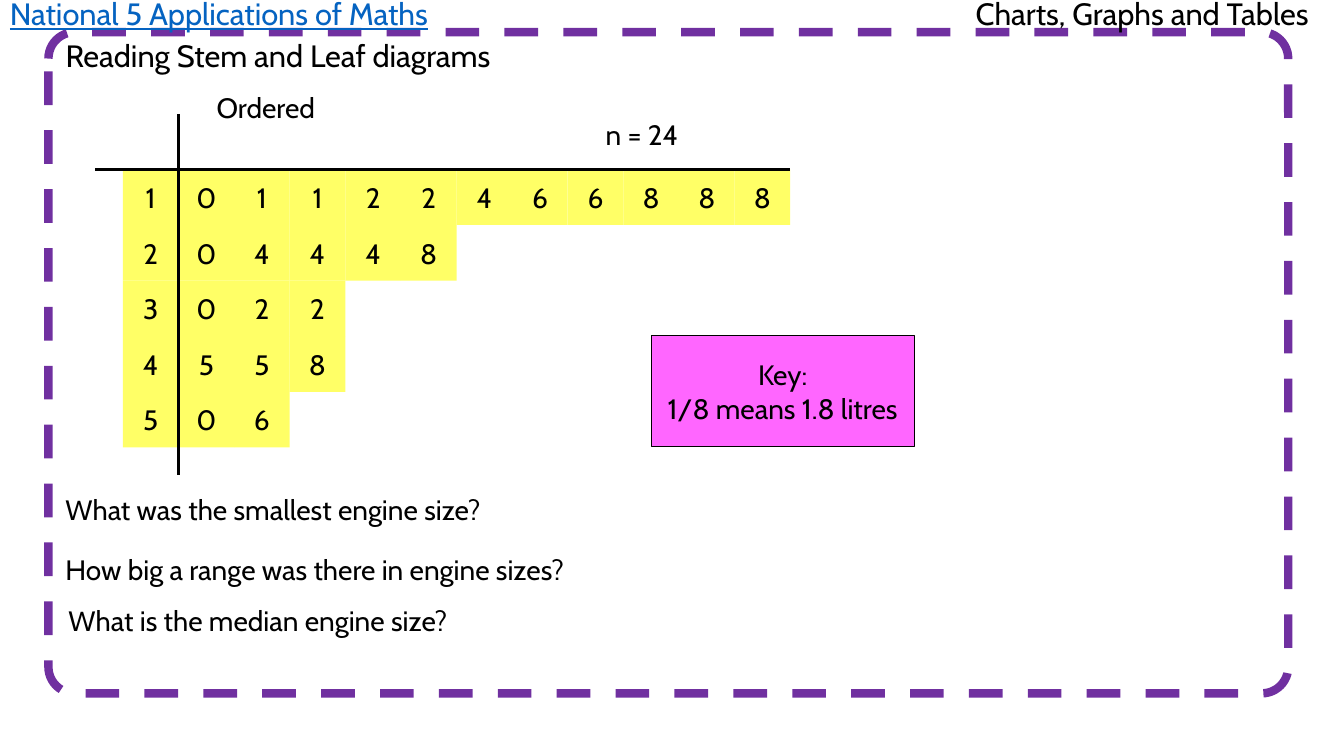
"""Build a slide on reading an ordered stem and leaf diagram."""
from dataclasses import dataclass

from lxml import etree
from pptx import Presentation
from pptx.dml.color import RGBColor
from pptx.enum.dml import MSO_LINE
from pptx.enum.shapes import MSO_CONNECTOR, MSO_SHAPE
from pptx.enum.text import MSO_ANCHOR, MSO_AUTO_SIZE, PP_ALIGN
from pptx.oxml.ns import qn
from pptx.util import Pt

DASH = MSO_LINE.DASH
LINE = MSO_CONNECTOR.STRAIGHT
RECT, ROUND = MSO_SHAPE.RECTANGLE, MSO_SHAPE.ROUNDED_RECTANGLE
TOP, MIDDLE = MSO_ANCHOR.TOP, MSO_ANCHOR.MIDDLE
FIXED = MSO_AUTO_SIZE.NONE
LEFT, CENTER = PP_ALIGN.LEFT, PP_ALIGN.CENTER


@dataclass(frozen=True)
class Theme:
    font: str = "Cabin"
    head: int = 22
    body: int = 20
    ink: str = "000000"
    blue: str = "0563C1"
    frame: str = "7030A0"
    cell: str = "FFFF66"
    key: str = "FF66FF"


THEME = Theme()
TITLE = ("Reading Stem and Leaf diagrams", (39.6, 22.3, 337, 33.8))
HEADS = [
    ("Charts, Graphs and Tables", (689.8, -7.2, 272.2, 33.8), THEME.ink, False),
    ("National 5 Applications of Maths", (0, -7.2, 333.4, 33.8), THEME.blue, True),
]
STEMS = {
    "1": "01122466888",
    "2": "04448",
    "3": "022",
    "4": "558",
    "5": "06",
}
NOTES = [
    ("n = 24", (425.5, 80.6, 218.2, 31.7)),
    ("Ordered", (147.6, 61.2, 198.7, 31.7)),
    ("What was the smallest engine size?", (39.6, 348.5, 697.7, 31.7)),
    ("How big a range was there in engine sizes?", (39.6, 391, 697.7, 31.7)),
    ("What is the median engine size?", (41.8, 427.7, 697.7, 31.7)),
]
KEY = ("Key:\n1/8 means 1.8 litres", (465.1, 239.8, 187.9, 79.2))
FRAME = (34.6, 23, 885.6, 472.3)
GRID_X, GRID_Y, CELL = 87.8, 121, 39.72


def points(box):
    return [Pt(n) for n in box]


def write(shape, text, size=THEME.body, color=THEME.ink, align=LEFT,
          anchor=TOP, wrap=True, under=None):
    frame = shape.text_frame
    frame.text = text
    frame.auto_size = FIXED
    frame.word_wrap = wrap
    frame.vertical_anchor = anchor
    for para in frame.paragraphs:
        para.alignment = align
        for run in para.runs:
            font = run.font
            font.name, font.size, font.underline = THEME.font, Pt(size), under
            font.color.rgb = RGBColor.from_string(color)


def draw(slide, kind, box, fill=None, line=None, width=0.75):
    shape = slide.shapes.add_shape(kind, *points(box))
    shape.shadow.inherit = False
    if fill:
        shape.fill.solid()
        shape.fill.fore_color.rgb = RGBColor.from_string(fill)
    else:
        shape.fill.background()
    if line:
        shape.line.color.rgb = RGBColor.from_string(line)
        shape.line.width = Pt(width)
    else:
        shape.line.fill.background()
    return shape


def rule(slide, ends):
    line = slide.shapes.add_connector(LINE, *points(ends))
    line.line.color.rgb = RGBColor.from_string(THEME.ink)
    line.line.width = Pt(2.25)
    etree.SubElement(line._element.spPr, qn("a:effectLst"))


def grid(slide):
    for row, (stem, leaves) in enumerate(STEMS.items()):
        for col, digit in enumerate(stem + leaves):
            box = (GRID_X + col * CELL, GRID_Y + row * CELL, CELL, CELL)
            cell = draw(slide, RECT, box, fill=THEME.cell)
            write(cell, digit, align=CENTER, anchor=MIDDLE, wrap=False)
    split = GRID_X + CELL
    half = CELL / 2
    right = GRID_X + CELL * (1 + max(map(len, STEMS.values())))
    base = GRID_Y + CELL * len(STEMS)
    rule(slide, (split, GRID_Y - CELL, split, base + half))
    rule(slide, (GRID_X - half, GRID_Y, right, GRID_Y))


def main():
    deck = Presentation()
    deck.slide_width, deck.slide_height = Pt(960), Pt(540)
    slide = deck.slides.add_slide(deck.slide_layouts[5])

    text, box = TITLE
    title = slide.shapes.title
    title.left, title.top, title.width, title.height = points(box)
    write(title, text, size=THEME.head, wrap=False)

    frame = draw(slide, ROUND, FRAME, line=THEME.frame, width=6)
    frame.adjustments[0] = 0.04
    frame.line.dash_style = DASH

    for text, box, color, under in HEADS:
        head = slide.shapes.add_textbox(*points(box))
        write(head, text, size=THEME.head, color=color, wrap=False, under=under)

    grid(slide)

    for text, box in NOTES:
        write(slide.shapes.add_textbox(*points(box)), text)

    text, box = KEY
    key = draw(slide, RECT, box, fill=THEME.key, line=THEME.ink)
    write(key, text, align=CENTER, anchor=MIDDLE, wrap=False)

    deck.save("out.pptx")


if __name__ == "__main__":
    main()
